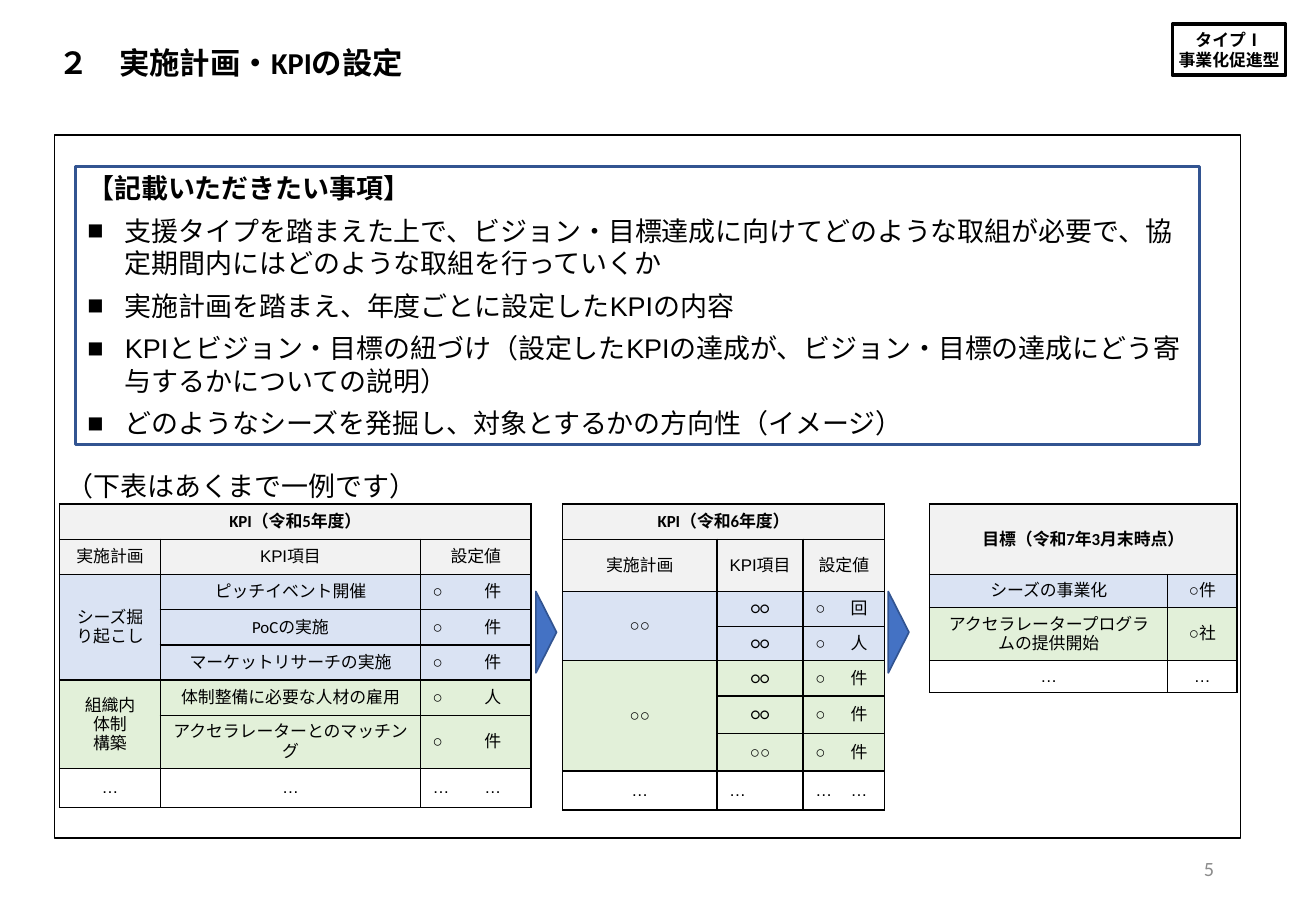
from pptx import Presentation
from pptx.dml.color import RGBColor
from pptx.enum.shapes import MSO_SHAPE as Shape
from pptx.enum.text import MSO_ANCHOR as Anchor, MSO_AUTO_SIZE as Auto, PP_ALIGN as Align
from pptx.oxml.ns import qn
from pptx.util import Pt
from lxml.etree import SubElement as Sub, Element

SCALE = 9144
BLACK, WHITE, GRAY = "000000", "FFFFFF", "F2F2F2"
BLUE, NAVY, SKY, LEAF = "4472C4", "325491", "DAE3F3", "E2F0D9"
NOTO = "Noto Sans CJK JP"

POINTS = [
    "支援タイプを踏まえた上で、ビジョン・目標達成に向けてどのような取組が必要で、協定期間内にはどのような取組を行っていくか",
    "実施計画を踏まえ、年度ごとに設定したKPIの内容",
    "KPIとビジョン・目標の紐づけ（設定したKPIの達成が、ビジョン・目標の達成にどう寄与するかについての説明）",
    "どのようなシーズを発掘し、対象とするかの方向性（イメージ）",
]
HEADS = ["実施計画", "KPI項目", "設定値", "<"]
DOTS = ["…"] * 4
YEAR_5 = [
    ["KPI（令和5年度）", "<", "<", "<"],
    HEADS,
    ["シーズ掘り起こし", "ピッチイベント開催", "○", "件"],
    ["^", "PoCの実施", "○", "件"],
    ["^", "マーケットリサーチの実施", "○", "件"],
    ["組織内\n体制\n構築", "体制整備に必要な人材の雇用", "○", "人"],
    ["^", "アクセラレーターとのマッチング", "○", "件"],
    DOTS,
]
YEAR_6 = [
    ["KPI（令和6年度）", "<", "<", "<"],
    HEADS,
    ["○○", "○○", "○", "回"],
    ["^", "○○", "○", "人"],
    ["○○", "○○", "○", "件"],
    ["^", "○○", "○", "件"],
    ["^", "○○", "○", "件"],
    DOTS,
]
GOALS = [
    ["目標（令和7年3月末時点）", "<"],
    ["シーズの事業化", "○件"],
    ["アクセラレータープログラムの提供開始", "○社"],
    ["…", "…"],
]


def px(*nums):
    return [n * SCALE for n in nums]


def tint(code):
    return RGBColor.from_string(code)


def add_run(para, text, size, face="Arial", bold=False, color=BLACK):
    run = para.add_run()
    run.text = text
    font = run.font
    font.size, font.name, font.bold = Pt(size), face, bold
    font.color.rgb = tint(color)
    Sub(run._r.get_or_add_rPr(), qn("a:ea"), typeface=face)


def set_frame(frame, inset=None, anchor=Anchor.MIDDLE):
    frame.word_wrap = True
    frame.auto_size = Auto.NONE
    frame.vertical_anchor = anchor
    if inset is not None:
        (frame.margin_left, frame.margin_right,
         frame.margin_top, frame.margin_bottom) = px(*[inset] * 4)


def add_lines(frame, text, align, **style):
    for i, line in enumerate(text.split("\n")):
        para = frame.add_paragraph() if i else frame.paragraphs[0]
        para.alignment = align
        add_run(para, line, **style)


def add_box(slide, kind, area, fill, line, width):
    box = slide.shapes.add_shape(kind, *px(*area))
    box.shadow.inherit = False
    box.fill.solid()
    box.fill.fore_color.rgb = tint(fill)
    box.line.color.rgb = tint(line)
    box.line.width = Pt(width)
    return box


def add_text(slide, area, text, align, anchor, **style):
    frame = slide.shapes.add_textbox(*px(*area)).text_frame
    set_frame(frame, anchor=anchor)
    add_lines(frame, text, align, **style)


def add_title(slide):
    title = slide.shapes.title
    title.left, title.top, title.width, title.height = px(44, 32, 405, 38)
    set_frame(title.text_frame, 4)
    add_lines(title.text_frame, "２　実施計画・KPIの設定", Align.LEFT,
              size=18, face="Calibri", bold=True)


def add_notes(slide):
    box = add_box(slide, Shape.RECTANGLE, (62, 137, 925, 229), WHITE, NAVY, 1.5)
    frame = box.text_frame
    set_frame(frame)
    head = frame.paragraphs[0]
    head.alignment, head.space_before = Align.LEFT, Pt(12)
    add_run(head, "【記載いただきたい事項】", 16, bold=True)
    for point in POINTS:
        para = frame.add_paragraph()
        para.alignment, para.space_before = Align.LEFT, Pt(6)
        props = para._p.get_or_add_pPr()
        props.set("marL", str(31 * SCALE))
        props.set("indent", str(-31 * SCALE))
        Sub(props, qn("a:buFont"), typeface="Arial")
        Sub(props, qn("a:buChar"), char="■")
        add_run(para, point, 16)


def set_edges(cell, gap):
    props = cell._tc.get_or_add_tcPr()
    for i, side in enumerate("LRTB"):
        edge = Element(qn("a:ln" + side), w=str(Pt(1)))
        if side == gap:
            Sub(edge, qn("a:noFill"))
        else:
            Sub(Sub(edge, qn("a:solidFill")), qn("a:srgbClr"), val=BLACK)
        props.insert(i, edge)


def add_grid(slide, left, cols, rows, data, fills, latin=()):
    area = px(left, 415, sum(cols), sum(rows))
    grid = slide.shapes.add_table(len(rows), len(cols), *area).table
    grid.first_row = grid.horz_banding = False
    for part, sizes in ((grid.columns, cols), (grid.rows, rows)):
        for item, size in zip(part, px(*sizes)):
            if part is grid.columns:
                item.width = size
            else:
                item.height = size
    origins = {}
    for r, row in enumerate(data):
        for c, text in enumerate(row):
            cell = grid.cell(r, c)
            cell.vertical_anchor = Anchor.MIDDLE
            cell.fill.solid()
            cell.fill.fore_color.rgb = tint(fills[r])
            is_pair = len(cols) == 4 and r > 1
            set_edges(cell, {2: "R", 3: "L"}.get(c) if is_pair else None)
            if text in "<^":
                back = (r, c - 1) if text == "<" else (r - 1, c)
                origins[r, c] = origins.get(back, back)
            else:
                face = "Calibri" if r == 0 or c == 1 and r in latin else "Arial"
                add_lines(cell.text_frame, text, Align.CENTER,
                          size=10, face=face, bold=r == 0)
    ends = {start: end for end, start in origins.items()}
    for start, end in ends.items():
        grid.cell(*start).merge(grid.cell(*end))
    return grid


def main():
    deck = Presentation()
    deck.slide_width, deck.slide_height = px(1083, 750)
    slide = deck.slides.add_slide(deck.slide_layouts[5])
    add_title(slide)

    tag = add_box(slide, Shape.RECTANGLE, (965, 20, 93, 42), WHITE, BLACK, 2.25)
    set_frame(tag.text_frame, 4)
    add_lines(tag.text_frame, "タイプⅠ\n事業化促進型", Align.CENTER, size=10, bold=True)

    add_box(slide, Shape.RECTANGLE, (45, 111, 976, 579), WHITE, BLACK, 1)

    add_grid(slide, 49, [83, 214, 28, 63], [29] * 6 + [44, 32], YEAR_5,
             [GRAY] * 2 + [SKY] * 3 + [LEAF] * 2 + [WHITE], range(2, 7))
    later = add_grid(slide, 463, [127, 71, 25, 42], [29, 43, 29, 28, 29, 31, 31, 32],
                     YEAR_6, [GRAY] * 2 + [SKY] * 2 + [LEAF] * 3 + [WHITE], range(2, 6))
    later.cell(7, 1).text_frame.paragraphs[0].alignment = Align.LEFT
    add_grid(slide, 765, [196, 57], [58, 27, 44, 26], GOALS, [GRAY, SKY, LEAF, WHITE])

    for left in (416, 706):
        arrow = add_box(slide, Shape.ISOSCELES_TRIANGLE, (left, 512, 67, 17), BLUE, NAVY, 1)
        arrow.rotation = 90

    add_text(slide, (45, 382, 376, 37), "（下表はあくまで一例です）", Align.LEFT, Anchor.TOP,
             size=16, face=NOTO)
    add_text(slide, (765, 695, 244, 40), "5", Align.RIGHT, Anchor.MIDDLE,
             size=12, face="Calibri", color="8C8C8C")
    add_notes(slide)
    deck.save("out.pptx")


if __name__ == "__main__":
    main()
